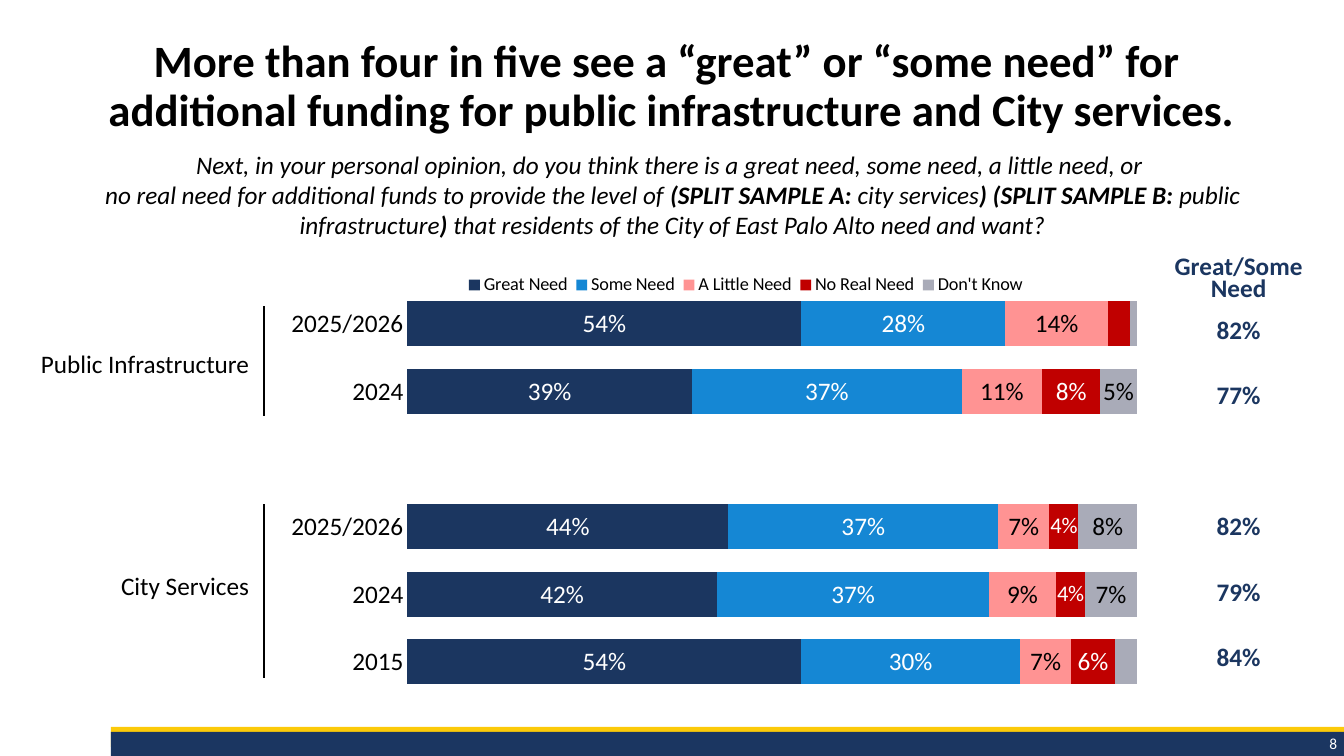
from pptx import Presentation
from pptx.chart.data import CategoryChartData
from pptx.dml.color import RGBColor
from pptx.enum.chart import XL_CHART_TYPE, XL_LEGEND_POSITION, XL_TICK_MARK
from pptx.enum.shapes import MSO_CONNECTOR, MSO_SHAPE
from pptx.enum.text import MSO_ANCHOR, PP_ALIGN
from pptx.oxml import parse_xml
from pptx.oxml.ns import nsdecls, qn
from pptx.util import Inches, Pt

WIDTH, HEIGHT = Inches(13.33), Inches(7.5)
FONT = "Calibri"
BLACK = RGBColor(0x00, 0x00, 0x00)
WHITE = RGBColor(0xFF, 0xFF, 0xFF)
NAVY = RGBColor(0x1B, 0x36, 0x60)
BLUE = RGBColor(0x15, 0x87, 0xD4)
PINK = RGBColor(0xFF, 0x93, 0x93)
RED = RGBColor(0xC0, 0x00, 0x00)
GRAY = RGBColor(0xA9, 0xAB, 0xB8)
FOOTER_NAVY = RGBColor(0x1B, 0x36, 0x61)
FOOTER_YELLOW = RGBColor(0xFC, 0xCA, 0x09)

TITLE = ("More than four in five see a “great” or “some need” for \n"
         "additional funding for public infrastructure and City services.")
QUESTION = [
    ("Next, in your personal opinion, do you think there is a great need, "
     "some need, a little need, or \nno real need for additional funds to "
     "provide the level of ", False),
    ("(SPLIT SAMPLE A:", True),
    (" city services", False),
    (") (SPLIT SAMPLE B:", True),
    (" public infrastructure", False),
    (") ", True),
    ("that residents of the City of East Palo Alto need and want?", False),
]
YEARS = ["2025/2026", "2024", "", "2025/2026", "2024", "2015"]
# name, values, fill, label colour, points without label, points with a smaller label
SERIES = [
    ("Great Need", (0.54, 0.39, None, 0.44, 0.42, 0.54), NAVY, WHITE, (), ()),
    ("Some Need", (0.28, 0.37, None, 0.37, 0.37, 0.30), BLUE, WHITE, (), ()),
    ("A Little Need", (0.14, 0.11, None, 0.07, 0.09, 0.07), PINK, BLACK, (), ()),
    ("No Real Need", (0.03, 0.08, None, 0.04, 0.04, 0.06), RED, WHITE, (0,), (3, 4)),
    ("Don't Know", (0.01, 0.05, None, 0.08, 0.07, 0.03), GRAY, BLACK, (0, 5), ()),
]
# text, row height; the header row leaves room above its tightly spaced lines
NEED_ROWS = [("Great/Some Need", 8), ("82%", 5.47), ("77%", 8.67), ("", 8.67),
             ("82%", 8.67), ("79%", 8.67), ("84%", 8.67)]
GROUP_ROWS = [("Public Infrastructure", 4.13), ("", 4.13), ("", 4.13),
              ("City Services", 21.07)]


def across(percent):
    return round(WIDTH * percent / 100)


def down(percent):
    return round(HEIGHT * percent / 100)


def area(left, top, width, height):
    """Turn percentages of the slide into lengths."""
    return across(left), down(top), across(width), down(height)


def set_values(target, values):
    for name, value in values.items():
        setattr(target, name, value)


def set_font(font, size, color, **values):
    set_values(font, {"name": FONT, "size": Pt(size), **values})
    font.color.rgb = color


def write(paragraph, text, size, color, **values):
    """Add text to a paragraph; a newline becomes a line break."""
    for index, line in enumerate(text.split("\n")):
        if index:
            paragraph.add_line_break()
        run = paragraph.add_run()
        run.text = line
        set_font(run.font, size, color, **values)


def add_text(slide, place, alignment, anchor=MSO_ANCHOR.TOP):
    """Add a text box and return its paragraph."""
    frame = slide.shapes.add_textbox(*area(*place)).text_frame
    set_values(frame, {"word_wrap": True, "vertical_anchor": anchor})
    paragraph = frame.paragraphs[0]
    paragraph.alignment = alignment
    return paragraph


def add_bar(slide, top, height, color):
    bar = slide.shapes.add_shape(MSO_SHAPE.RECTANGLE, *area(8.25, top, 91.75, height))
    bar.shadow.inherit = False
    bar.fill.solid()
    bar.fill.fore_color.rgb = color
    bar.line.fill.background()


def add_bracket(slide, top, bottom):
    line = slide.shapes.add_connector(
        MSO_CONNECTOR.STRAIGHT, across(19.65), down(top), across(19.65), down(bottom))
    line.line.color.rgb = BLACK
    line.line.width = Pt(1.5)
    line._element.spPr.append(parse_xml(f"<a:effectLst {nsdecls('a')}/>"))


def add_column(slide, rows, left, top, width, alignment, color, bold=False):
    """Add a table of one column, with text at the foot of each cell."""
    height = sum(share for _, share in rows)
    table = slide.shapes.add_table(len(rows), 1, *area(left, top, width, height)).table
    set_values(table, {"first_row": False, "horz_banding": False})
    for index, (text, share) in enumerate(rows):
        table.rows[index].height = down(share)
        cell = table.cell(index, 0)
        cell.fill.background()
        set_values(cell, {"vertical_anchor": MSO_ANCHOR.BOTTOM,
                          "margin_left": Inches(0.01), "margin_right": Inches(0.01),
                          "margin_top": Inches(0.01), "margin_bottom": 0})
        paragraph = cell.text_frame.paragraphs[0]
        paragraph.alignment = alignment
        if text:
            write(paragraph, text, 18, color, bold=bold)
    return table


def set_layout(parent, position, x, y, width, height, inner=False):
    """Place a chart part by shares of the chart's size."""
    old = parent.find(qn("c:layout"))
    if old is not None:
        parent.remove(old)
    target = '<c:layoutTarget val="inner"/>' if inner else ""
    parent.insert(position, parse_xml(
        f'<c:layout {nsdecls("c")}><c:manualLayout>{target}'
        '<c:xMode val="edge"/><c:yMode val="edge"/>'
        f'<c:x val="{x}"/><c:y val="{y}"/><c:w val="{width}"/><c:h val="{height}"/>'
        '</c:manualLayout></c:layout>'))


def format_series(series, fill, label_color, unlabelled, smaller):
    series.format.fill.solid()
    series.format.fill.fore_color.rgb = fill
    labels = series.data_labels
    set_values(labels, {"show_value": True, "number_format": "0%",
                        "number_format_is_linked": False})
    set_font(labels.font, 18, label_color)
    for point in smaller:
        set_font(series.points[point].data_label.font, 16, label_color)
    for point in reversed(unlabelled):
        labels._element.insert(0, parse_xml(
            f'<c:dLbl {nsdecls("c")}><c:idx val="{point}"/><c:delete val="1"/></c:dLbl>'))


def add_need_chart(slide):
    data = CategoryChartData(number_format="0%")
    data.categories = YEARS
    for name, values, *_ in SERIES:
        data.add_series(name, values)
    chart = slide.shapes.add_chart(
        XL_CHART_TYPE.BAR_STACKED_100, *area(20.5, 32.2, 65.4, 61.07), data).chart
    set_font(chart.font, 18, BLACK)
    set_values(chart, {"has_title": False, "has_legend": True})
    set_values(chart.legend, {"position": XL_LEGEND_POSITION.TOP,
                              "include_in_layout": False})
    set_font(chart.legend.font, 13, BLACK)
    set_values(chart.value_axis, {"visible": False, "has_major_gridlines": False,
                                  "major_unit": 0.2, "minimum_scale": 0,
                                  "maximum_scale": 1})
    axis = chart.category_axis
    set_values(axis, {"reverse_order": True, "major_tick_mark": XL_TICK_MARK.NONE})
    axis.format.line.fill.background()
    set_font(axis.tick_labels.font, 18, BLACK)
    plot = chart.plots[0]
    set_values(plot, {"gap_width": 50, "overlap": 100, "vary_by_categories": False})
    for series, (_, _, *style) in zip(plot.series, SERIES):
        format_series(series, *style)
    set_layout(chart._chartSpace.chart.plotArea, 0, 0.15, 0.1, 0.83, 0.88, inner=True)
    set_layout(chart.legend._element, 1, 0.21, 0.06, 0.65, 0.06)


def main():
    presentation = Presentation()
    set_values(presentation, {"slide_width": WIDTH, "slide_height": HEIGHT})
    slide = presentation.slides.add_slide(presentation.slide_layouts[6])
    add_bar(slide, 96.13, 2.67, FOOTER_YELLOW)
    add_bar(slide, 96.8, 3.2, FOOTER_NAVY)
    number = add_text(slide, (85.45, 96.4, 14.78, 3.87), PP_ALIGN.RIGHT, MSO_ANCHOR.MIDDLE)
    write(number, "8", 11, WHITE)
    add_need_chart(slide)
    needs = add_column(slide, NEED_ROWS, 86.57, 32.27, 11.18, PP_ALIGN.CENTER, NAVY, bold=True)
    needs.cell(0, 0).text_frame.paragraphs[0].line_spacing = Pt(16)
    title = add_text(slide, (2.48, 4.53, 95.05, 14.8), PP_ALIGN.CENTER)
    title.line_spacing = 0.9
    write(title, TITLE, 32, BLACK, bold=True)
    add_column(slide, GROUP_ROWS, 1.13, 46.13, 17.48, PP_ALIGN.RIGHT, BLACK)
    add_bracket(slide, 40.53, 55.07)
    add_bracket(slide, 66.67, 89.73)
    question = add_text(slide, (2.33, 19.07, 95.42, 13.47), PP_ALIGN.CENTER)
    for text, bold in QUESTION:
        write(question, text, 18, BLACK, italic=True, bold=bold)
    presentation.save("out.pptx")


if __name__ == "__main__":
    main()
